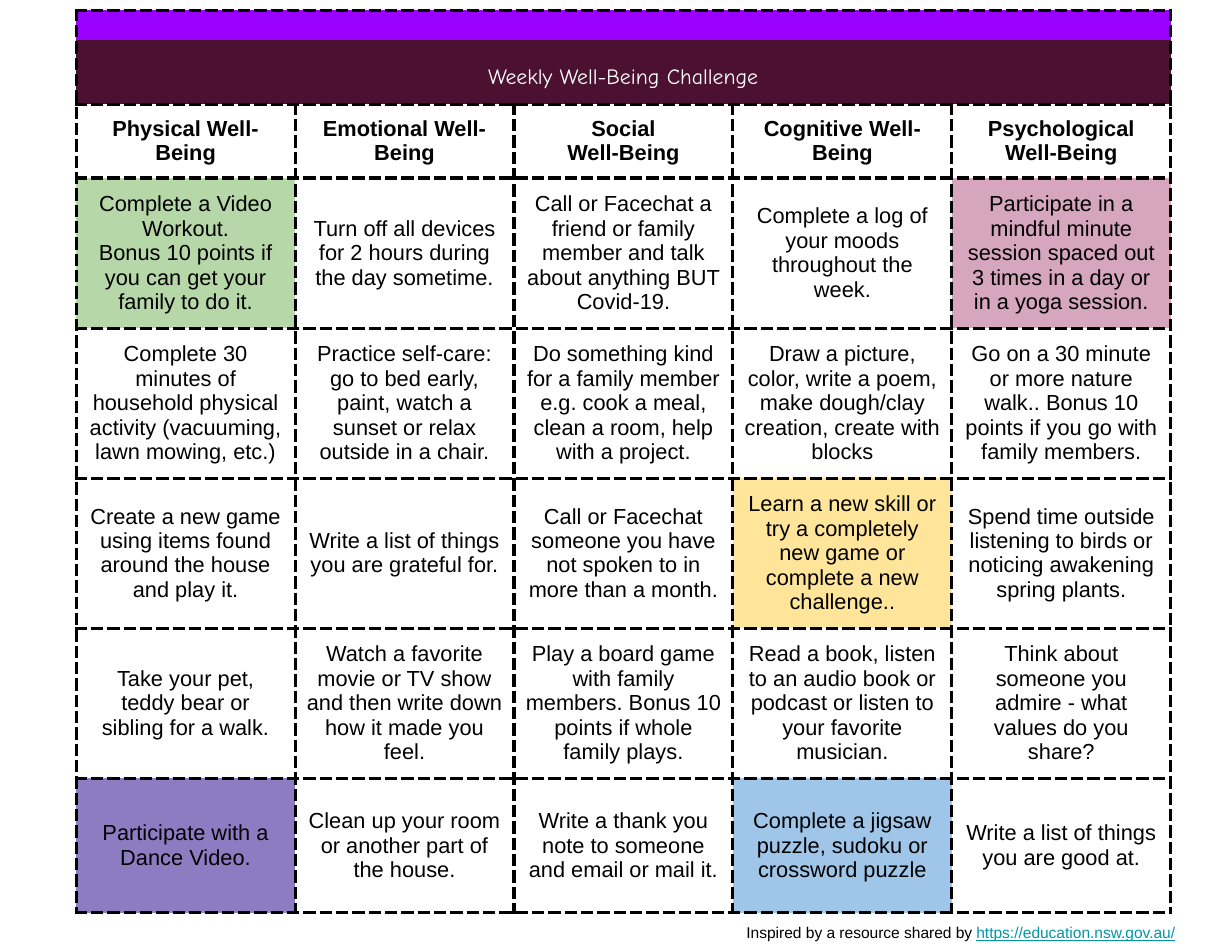
"""Build a one-slide weekly well-being challenge board."""
from lxml import etree
from pptx import Presentation
from pptx.dml.color import RGBColor
from pptx.enum.text import MSO_ANCHOR, MSO_AUTO_SIZE, PP_ALIGN
from pptx.oxml.ns import qn
from pptx.util import Inches, Pt

CENTER, RIGHT = PP_ALIGN.CENTER, PP_ALIGN.RIGHT
MIDDLE = MSO_ANCHOR.MIDDLE
NO_AUTOFIT = MSO_AUTO_SIZE.NONE
PLAIN_TABLE_STYLE = "{2D5ABB26-0587-4C30-8999-92F81FD0307C}"

TITLE = "Weekly Well-Being Challenge"
CREDIT = [
    ("Inspired by a resource shared by ", "000000", False),
    ("https://education.nsw.gov.au/", "0097A7", True),
]
BANDS = ["9900FF", "4C1130"]
HEADINGS = [
    "Physical Well-Being",
    "Emotional Well-Being",
    "Social\nWell-Being",
    "Cognitive Well-Being",
    "Psychological Well-Being",
]
CHALLENGES = [
    [
        "Complete a Video Workout.\nBonus 10 points if you can get your family to do it.",
        "Turn off all devices for 2 hours during the day sometime.",
        "Call or Facechat a friend or family member and talk about anything BUT Covid-19.",
        "Complete a log of your moods throughout the week.",
        "Participate in a mindful minute session spaced out 3 times in a day or in a yoga session.",
    ],
    [
        "Complete 30 minutes of household physical activity (vacuuming, lawn mowing, etc.)",
        "Practice self-care: go to bed early, paint, watch a sunset or relax outside in a chair.",
        "Do something kind for a family member e.g. cook a meal, clean a room, help with a project.",
        "Draw a picture, color, write a poem, make dough/clay creation, create with blocks",
        "Go on a 30 minute or more nature walk.. Bonus 10 points if you go with family members.",
    ],
    [
        "Create a new game using items found around the house and play it.",
        "Write a list of things you are grateful for.",
        "Call or Facechat someone you have not spoken to in more than a month.",
        "Learn a new skill or try a completely new game or complete a new challenge..",
        "Spend time outside listening to birds or noticing awakening spring plants.",
    ],
    [
        "Take your pet, teddy bear or sibling for a walk.",
        "Watch a favorite movie or TV show and then write down how it made you feel.",
        "Play a board game with family members. Bonus 10 points if whole family plays.",
        "Read a book, listen to an audio book or podcast or listen to your favorite musician.",
        "Think about someone you admire - what values do you share?",
    ],
    [
        "Participate with a Dance Video.",
        "Clean up your room or another part of the house.",
        "Write a thank you note to someone and email or mail it.",
        "Complete a jigsaw puzzle, sudoku or crossword puzzle",
        "Write a list of things you are good at.",
    ],
]
HIGHLIGHTS = {
    (0, 0): "B6D7A8",
    (0, 4): "D5A6BD",
    (2, 3): "FFE599",
    (4, 0): "8E7CC3",
    (4, 3): "9FC5E8",
}
ROW_HEIGHTS = [0.27, 0.57, 0.66, 1.34, 1.34, 1.34, 1.34, 1.2]
COLUMN_WIDTH = 1.955


def color(value):
    return RGBColor.from_string(value)


def style_run(run, size, name, value, bold=False, underline=False):
    font = run.font
    font.size, font.name, font.bold = Pt(size), name, bold
    font.underline = underline
    font.color.rgb = color(value)


def set_margins(target, margin):
    target.margin_left = target.margin_right = Inches(margin)
    target.margin_top = target.margin_bottom = Inches(margin)


def add_borders(cell, sides):
    properties = cell._tc.get_or_add_tcPr()
    for index, side in enumerate(sides):
        line = etree.Element(qn(f"a:ln{side}"), w=str(Pt(2.25)))
        fill = etree.SubElement(line, qn("a:solidFill"))
        etree.SubElement(fill, qn("a:srgbClr"), val="000000")
        etree.SubElement(line, qn("a:prstDash"), val="dash")
        properties.insert(index, line)


def fill_cell(cell, text, fill, bold):
    cell.text = text
    cell.vertical_anchor = MIDDLE
    set_margins(cell, 0.1)
    for paragraph in cell.text_frame.paragraphs:
        paragraph.alignment = CENTER
        for run in paragraph.runs:
            style_run(run, 14, "Arial", "000000", bold)
    if fill:
        cell.fill.solid()
        cell.fill.fore_color.rgb = color(fill)
    else:
        cell.fill.background()
    add_borders(cell, "LRTB")


def add_band(table, row, fill, edge):
    last = len(HEADINGS) - 1
    table.cell(row, 0).merge(table.cell(row, last))
    for column in range(last + 1):
        cell = table.cell(row, column)
        set_margins(cell, 0)
        cell.fill.solid()
        cell.fill.fore_color.rgb = color(fill)
        paragraph = cell.text_frame.paragraphs[0]
        etree.SubElement(paragraph._p, qn("a:endParaRPr"), sz="800")
        sides = {0: "LR", last: "R"}.get(column, "")
        add_borders(cell, sides + edge)


def add_board(slide):
    frame = slide.shapes.add_table(
        len(ROW_HEIGHTS), len(HEADINGS), Inches(0.68), Inches(0.09),
        Inches(COLUMN_WIDTH * len(HEADINGS)), Inches(sum(ROW_HEIGHTS)))
    table = frame.table
    table.first_row = table.horz_banding = False
    for style in frame.element.iter(qn("a:tableStyleId")):
        style.text = PLAIN_TABLE_STYLE
    for column in table.columns:
        column.width = Inches(COLUMN_WIDTH)
    for row, height in zip(table.rows, ROW_HEIGHTS):
        row.height = Inches(height)
    for row, (fill, edge) in enumerate(zip(BANDS, "TB")):
        add_band(table, row, fill, edge)
    for index, texts in enumerate([HEADINGS] + CHALLENGES):
        for column, text in enumerate(texts):
            cell = table.cell(index + len(BANDS), column)
            fill_cell(cell, text, HIGHLIGHTS.get((index - 1, column)), index == 0)


def place_title(slide):
    title = slide.shapes.title
    title.left, title.top = Inches(2.3), Inches(0.49)
    title.width, title.height = Inches(6.53), Inches(0.38)
    frame = title.text_frame
    frame.text = TITLE
    frame.auto_size, frame.vertical_anchor = NO_AUTOFIT, MIDDLE
    paragraph = frame.paragraphs[0]
    paragraph.alignment = CENTER
    style_run(paragraph.runs[0], 14, "Comic Neue", "FFFFFF")
    title.element.getparent().append(title.element)


def add_credit(slide):
    box = slide.shapes.add_textbox(Inches(5.82), Inches(8.16), Inches(4.77), Inches(0.23))
    frame = box.text_frame
    frame.word_wrap = True
    set_margins(frame, 0.1)
    paragraph = frame.paragraphs[0]
    paragraph.alignment = RIGHT
    for text, value, underline in CREDIT:
        run = paragraph.add_run()
        run.text = text
        style_run(run, 10, "Arial", value, underline=underline)


def main():
    presentation = Presentation()
    presentation.slide_width, presentation.slide_height = Inches(11), Inches(8.5)
    slide = presentation.slides.add_slide(presentation.slide_layouts[5])
    add_board(slide)
    place_title(slide)
    add_credit(slide)
    presentation.save("out.pptx")


if __name__ == "__main__":
    main()
